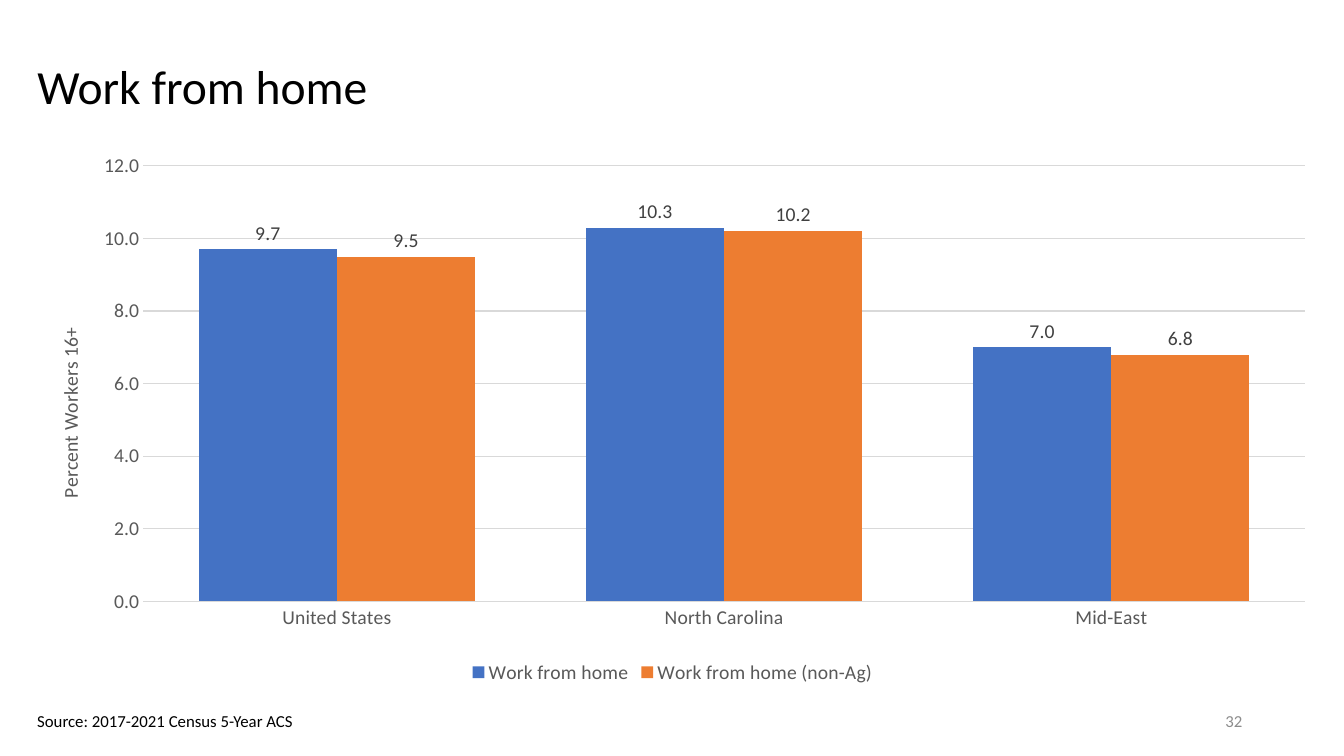
"""Build the slide that compares shares of people who work from home."""
from dataclasses import dataclass
from typing import Any

from lxml.etree import SubElement
from pptx import Presentation
from pptx.chart.data import CategoryChartData
from pptx.dml.color import RGBColor
from pptx.enum.chart import XL_CHART_TYPE, XL_LABEL_POSITION, XL_LEGEND_POSITION, XL_TICK_MARK
from pptx.enum.text import MSO_ANCHOR, PP_ALIGN
from pptx.oxml import parse_xml
from pptx.oxml.ns import nsdecls, qn
from pptx.util import Pt

PX = 9144


@dataclass(frozen=True)
class Theme:
    face: str = "Calibri"
    black: str = "000000"
    grey: str = "595959"
    dark: str = "404040"
    pale: str = "8C8C8C"
    rule: str = "D9D9D9"
    head: int = 34
    body: int = 14
    small: int = 12
    line: float = 0.75


@dataclass(frozen=True)
class Box:
    left: int
    top: int
    width: int
    height: int

    def emu(self) -> tuple[int, ...]:
        return tuple(n * PX for n in (self.left, self.top, self.width, self.height))


@dataclass(frozen=True)
class Note:
    text: str
    box: Box
    color: str
    align: PP_ALIGN
    anchor: MSO_ANCHOR
    wrap: bool


@dataclass(frozen=True)
class Bars:
    name: str
    color: str
    values: tuple[float, ...]


THEME = Theme()
TITLE = Box(27, 34, 1276, 109)
CHART = Box(27, 143, 1280, 540)
PLACES = ("United States", "North Carolina", "Mid-East")
SERIES = (
    Bars("Work from home", "4472C4", (9.7, 10.3, 7.0)),
    Bars("Work from home (non-Ag)", "ED7D31", (9.5, 10.2, 6.8)),
)
NOTES = (
    Note("32", Box(942, 695, 300, 40), THEME.pale,
         PP_ALIGN.RIGHT, MSO_ANCHOR.MIDDLE, True),
    Note("Source: 2017-2021 Census 5-Year ACS", Box(27, 700, 278, 30), THEME.black,
         PP_ALIGN.LEFT, MSO_ANCHOR.TOP, False),
)


def set_font(font: Any, size: int, color: str) -> None:
    font.name = THEME.face
    font.size = Pt(size)
    font.bold = False
    font.color.rgb = RGBColor.from_string(color)


def set_line(line: Any) -> None:
    line.width = Pt(THEME.line)
    line.color.rgb = RGBColor.from_string(THEME.rule)


def set_place(parent: Any, index: int, **parts: Any) -> None:
    for old in parent.findall(qn("c:layout")):
        parent.remove(old)
    layout = parse_xml(f"<c:layout {nsdecls('c')}/>")
    manual = SubElement(layout, qn("c:manualLayout"))
    for name, value in parts.items():
        SubElement(manual, qn(f"c:{name}")).set("val", str(value))
    parent.insert(index, layout)


def add_title(slide: Any, text: str) -> None:
    shape = slide.shapes.title
    shape.left, shape.top, shape.width, shape.height = TITLE.emu()
    frame = shape.text_frame
    frame.text = text
    frame.vertical_anchor = MSO_ANCHOR.MIDDLE
    para = frame.paragraphs[0]
    para.alignment = PP_ALIGN.LEFT
    para.line_spacing = 0.9
    set_font(para.font, THEME.head, THEME.black)


def add_note(slide: Any, note: Note) -> None:
    frame = slide.shapes.add_textbox(*note.box.emu()).text_frame
    frame.word_wrap = note.wrap
    frame.vertical_anchor = note.anchor
    para = frame.paragraphs[0]
    para.text = note.text
    para.alignment = note.align
    set_font(para.font, THEME.small, note.color)


def style_axes(chart: Any) -> None:
    for axis in (chart.category_axis, chart.value_axis):
        axis.major_tick_mark = axis.minor_tick_mark = XL_TICK_MARK.NONE
        set_font(axis.tick_labels.font, THEME.body, THEME.grey)
    set_line(chart.category_axis.format.line)
    scale = chart.value_axis
    scale.minimum_scale, scale.maximum_scale, scale.major_unit = 0, 12, 2
    scale.format.line.fill.background()
    set_line(scale.major_gridlines.format.line)
    scale.tick_labels.number_format = "0.0"
    scale.tick_labels.number_format_is_linked = False
    title = scale.axis_title
    frame = title.text_frame
    frame.text = "Percent Workers 16+"
    set_font(frame.paragraphs[0].font, THEME.body, THEME.grey)
    body = frame._txBody.bodyPr
    body.set("rot", "-5400000")
    body.set("vert", "horz")
    set_place(title._element, 1, xMode="edge", yMode="edge", x=0.02, y=0.33)


def style_bars(series: Any, bars: Bars) -> None:
    series.format.fill.solid()
    series.format.fill.fore_color.rgb = RGBColor.from_string(bars.color)
    series.invert_if_negative = False
    labels = series.data_labels
    labels.show_value = True
    labels.position = XL_LABEL_POSITION.OUTSIDE_END
    labels.number_format = "0.0"
    labels.number_format_is_linked = False
    set_font(labels.font, THEME.body, THEME.dark)


def add_chart(slide: Any) -> None:
    data = CategoryChartData(number_format="0.0")
    data.categories = PLACES
    for bars in SERIES:
        data.add_series(bars.name, bars.values)
    chart = slide.shapes.add_chart(XL_CHART_TYPE.COLUMN_CLUSTERED, *CHART.emu(), data).chart
    set_font(chart.font, THEME.body, THEME.black)
    chart.has_title = False
    chart.has_legend = True
    chart.legend.position = XL_LEGEND_POSITION.BOTTOM
    chart.legend.include_in_layout = False
    set_font(chart.legend.font, THEME.body, THEME.grey)
    plot = chart.plots[0]
    plot.gap_width, plot.overlap = 80, 0
    plot.vary_by_categories = False
    for series, bars in zip(plot.series, SERIES):
        style_bars(series, bars)
    style_axes(chart)
    set_place(chart._chartSpace.chart.plotArea, 0, layoutTarget="inner", xMode="edge",
              yMode="edge", x=0.09, y=0.04, w=0.9, h=0.8)


def main() -> None:
    deck = Presentation()
    deck.slide_width, deck.slide_height = 1333 * PX, 750 * PX
    slide = deck.slides.add_slide(deck.slide_layouts[5])
    add_title(slide, "Work from home")
    for note in NOTES:
        add_note(slide, note)
    add_chart(slide)
    deck.save("out.pptx")


if __name__ == "__main__":
    main()
